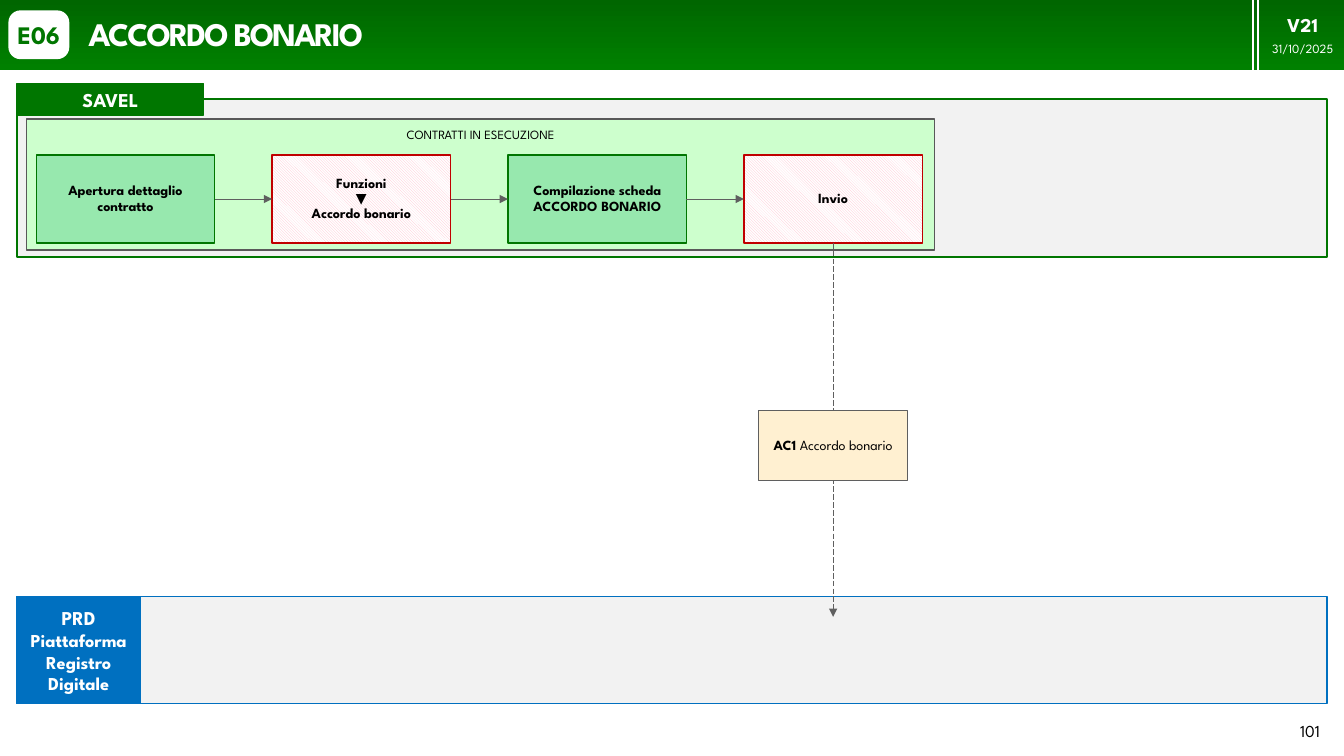
from dataclasses import dataclass
from typing import Optional

from lxml import etree
from pptx import Presentation, util as u
from pptx.dml.color import RGBColor
from pptx.enum import dml, shapes, text
from pptx.oxml.ns import qn

WIDE, HIGH = 13.33, 7.5


@dataclass(frozen=True)
class Theme:
    font: str = "League Spartan"
    white: str = "FFFFFF"
    black: str = "000000"
    dark: str = "006600"
    bright: str = "008000"
    green: str = "007600"
    mint: str = "97E8AE"
    pale: str = "CDFFCD"
    blue: str = "0070C0"
    grey: str = "F2F2F2"
    edge: str = "595959"
    wire: str = "5F5F5F"
    red: str = "C00000"
    pink: str = "FFBFCC"
    cream: str = "FFF0D1"
    title: float = 23.5
    badge: float = 18
    head: float = 14
    lane: float = 13
    page: float = 12
    body: float = 10
    small: float = 9


T = Theme()


@dataclass(frozen=True)
class Box:
    """Place and size in percent of the slide's width and height."""
    x: float
    y: float
    w: float
    h: float

    @property
    def mid(self) -> float:
        return self.x + self.w / 2

    def place(self) -> tuple:
        return across(self.x), down(self.y), across(self.w), down(self.h)


@dataclass(frozen=True)
class Run:
    text: str
    size: Optional[float] = None
    bold: Optional[bool] = None


@dataclass(frozen=True)
class Para:
    runs: tuple
    size: float = T.body
    bold: bool = True
    color: str = T.black
    align: text.PP_ALIGN = text.PP_ALIGN.CENTER
    gap: float = 1.0
    after: float = 0


@dataclass(frozen=True)
class Step:
    lines: tuple
    action: bool = False


def across(share: float) -> int:
    return u.Inches(WIDE * share / 100)


def down(share: float) -> int:
    return u.Inches(HIGH * share / 100)


def rgb(code: str) -> RGBColor:
    return RGBColor.from_string(code)


def line(words: str, **style) -> Para:
    return Para((Run(words),), **style)


def write(frame, paras: list, inset: tuple = (.1, .05, .1, .05), top: bool = False) -> None:
    frame.word_wrap = True
    frame.auto_size = text.MSO_AUTO_SIZE.NONE
    frame.vertical_anchor = text.MSO_ANCHOR.TOP if top else text.MSO_ANCHOR.MIDDLE
    (frame.margin_left, frame.margin_top,
     frame.margin_right, frame.margin_bottom) = map(u.Inches, inset)
    for i, para in enumerate(paras):
        p = frame.add_paragraph() if i else frame.paragraphs[0]
        p.alignment, p.line_spacing = para.align, para.gap
        p.space_before, p.space_after = u.Pt(0), u.Pt(para.after)
        p.font.name, p.font.size = T.font, u.Pt(para.size)
        p.font.bold, p.font.color.rgb = para.bold, rgb(para.color)
        for part in para.runs:
            run = p.add_run()
            run.text = part.text
            if part.size is not None:
                run.font.size = u.Pt(part.size)
            if part.bold is not None:
                run.font.bold = part.bold


def block(slide, box: Box, fill: Optional[str] = None, edge: Optional[str] = None,
          hatch: bool = False, kind=shapes.MSO_SHAPE.RECTANGLE):
    shape = slide.shapes.add_shape(kind, *box.place())
    shape.shadow.inherit = False
    if hatch:
        shape.fill.patterned()
        shape.fill.pattern = dml.MSO_PATTERN.LIGHT_DOWNWARD_DIAGONAL
        shape.fill.fore_color.rgb = rgb(T.pink)
        shape.fill.back_color.rgb = rgb(T.white)
    elif fill:
        shape.fill.solid()
        shape.fill.fore_color.rgb = rgb(fill)
    else:
        shape.fill.background()
    if edge:
        shape.line.color.rgb = rgb(edge)
        shape.line.width = u.Pt(1)
    else:
        shape.line.fill.background()
    return shape


def link(slide, start: tuple, end: tuple, color: str = T.wire, width: float = .5,
         dash: bool = False, arrow: bool = True) -> None:
    wire = slide.shapes.add_connector(
        shapes.MSO_CONNECTOR.STRAIGHT, across(start[0]), down(start[1]),
        across(end[0]), down(end[1]))
    wire.line.color.rgb = rgb(color)
    wire.line.width = u.Pt(width)
    if dash:
        wire.line.dash_style = dml.MSO_LINE.LONG_DASH
    props = wire.element.spPr
    if arrow:
        etree.SubElement(props.find(qn("a:ln")), qn("a:tailEnd"), type="triangle")
    etree.SubElement(props, qn("a:effectLst"))


def header(slide) -> None:
    title = slide.shapes.title
    band = block(slide, Box(0, 0, 100, 9.2))
    band.fill.gradient()
    band.fill.gradient_angle = 270
    for stop, color in zip(band.fill.gradient_stops, (T.dark, T.bright)):
        stop.color.rgb = rgb(color)
    title.element.addprevious(band.element)

    title.left, title.top, title.width, title.height = Box(5.85, 1.07, 90.47, 7.33).place()
    write(title.text_frame, [line("ACCORDO BONARIO", size=T.title, color=T.white,
                                  align=text.PP_ALIGN.LEFT, gap=.9)])
    title.text_frame.paragraphs[0].runs[0].font._element.set("spc", "-140")

    badge = block(slide, Box(.68, 1.47, 4.43, 6.27), T.white, T.white,
                  kind=shapes.MSO_SHAPE.ROUNDED_RECTANGLE)
    badge.adjustments[0] = .24
    write(badge.text_frame, [line("E06", size=T.badge, color=T.green)], (0, 0, 0, 0))

    for x in (93.25, 93.62):
        link(slide, (x, 0), (x, 10), T.white, 1.5, arrow=False)
    stamp = block(slide, Box(93.77, 0, 6.3, 9.07))
    write(stamp.text_frame, [
        line("V21", size=T.head, color=T.white, after=3),
        line("31/10/2025", size=T.small, bold=False, color=T.white)], (0, 0, 0, 0))


def lanes(slide) -> None:
    # Lower lane
    left, wide = 1.28, 97.45
    block(slide, Box(left, 78.93, wide, 14.13), T.grey, T.blue)
    label = block(slide, Box(left, 78.93, 9.15, 14.13), T.blue, T.blue)
    write(label.text_frame, [Para(
        (Run("PRD", T.head), Run(" Piattaforma Registro Digitale")),
        size=T.lane, color=T.white)])
    # Upper lane
    block(slide, Box(left, 13.07, wide, 20.93), T.grey, T.green)
    tab = block(slide, Box(left, 11.07, 13.88, 4.13), T.green, T.green)
    write(tab.text_frame, [line("SAVEL", size=T.head, color=T.white)])
    group = block(slide, Box(1.95, 15.73, 67.59, 17.33), T.pale, T.edge)
    write(group.text_frame, [line("CONTRATTI IN ESECUZIONE", size=T.small, bold=False)],
          (.04, .08, .04, .05), top=True)


def flow(slide) -> None:
    steps = (
        Step(("Apertura dettaglio", "contratto")),
        Step(("Funzioni", "▼", "Accordo bonario"), True),
        Step(("Compilazione scheda", "ACCORDO BONARIO")),
        Step(("Invio",), True),
    )
    pitch, inset = 17.55, (.04, .05, .04, .05)
    boxes = [Box(2.7 + i * pitch, 20.53, 13.28, 11.6) for i in range(len(steps))]
    for step, box in zip(steps, boxes):
        shape = block(slide, box, T.mint, T.red if step.action else T.green, step.action)
        write(shape.text_frame, [line(words, gap=.9) for words in step.lines], inset)
    for here, there in zip(boxes, boxes[1:]):
        y = here.y + here.h / 2
        link(slide, (here.x + here.w, y), (there.x, y))

    # Message sent to the lower lane
    last, wide = boxes[-1], 11.1
    link(slide, (last.mid, last.y + last.h), (last.mid, 81.6), dash=True)
    form = block(slide, Box(last.mid - wide / 2, 54.27, wide, 9.33), T.cream, T.wire)
    write(form.text_frame, [Para((Run("AC1 "), Run("Accordo bonario", bold=False)),
                                 gap=.9)], inset)


def main() -> None:
    deck = Presentation()
    deck.slide_width, deck.slide_height = u.Inches(WIDE), u.Inches(HIGH)
    slide = deck.slides.add_slide(deck.slide_layouts[5])
    header(slide)
    lanes(slide)
    flow(slide)
    # Page number
    page = slide.shapes.add_textbox(*Box(76.44, 94, 22.51, 5.33).place())
    write(page.text_frame, [line("101", size=T.page, bold=False, align=text.PP_ALIGN.RIGHT)])
    deck.save("out.pptx")


if __name__ == "__main__":
    main()
